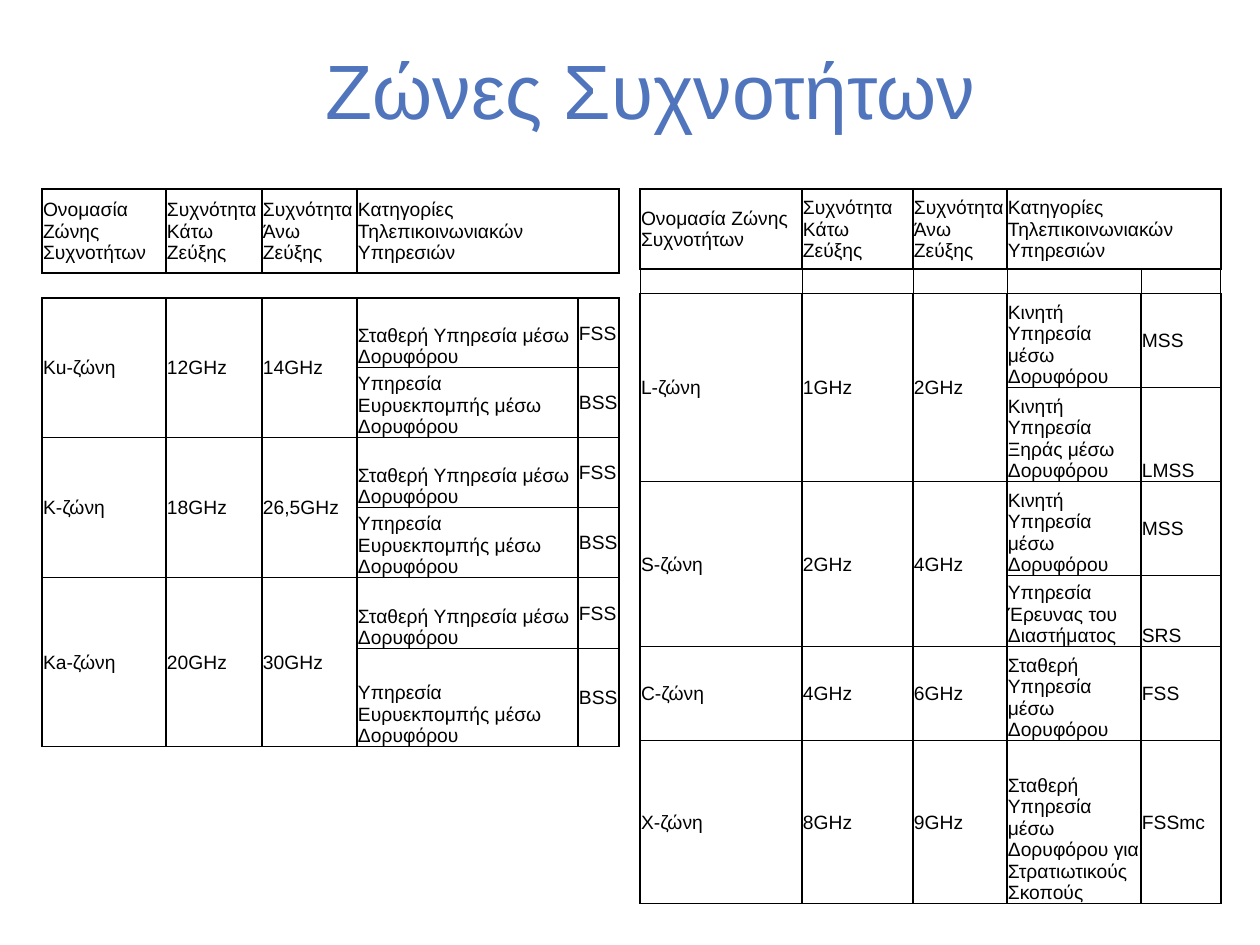
from lxml import etree
from pptx import Presentation
from pptx import util as u
from pptx.dml.color import RGBColor
from pptx.enum import text
from pptx.oxml import ns

SLIDE_W, SLIDE_H = 1260, 945
PX = 914400 / 126
FONT = "Arial"
BLUE = RGBColor(0x50, 0x75, 0xBC)
BLACK = RGBColor(0, 0, 0)
PLAIN_STYLE = "{2D5ABB26-0587-4C30-8999-92F81FD0307C}"
MIDDLE = text.MSO_ANCHOR.MIDDLE
BOTTOM = text.MSO_ANCHOR.BOTTOM

HEADINGS = [
    "Ονομασία Ζώνης Συχνοτήτων",
    "Συχνότητα Κάτω Ζεύξης",
    "Συχνότητα Άνω Ζεύξης",
    "Κατηγορίες Τηλεπικοινωνιακών Υπηρεσιών",
]
FIXED = "Σταθερή Υπηρεσία μέσω Δορυφόρου"
BROADCAST = "Υπηρεσία Ευρυεκπομπής μέσω Δορυφόρου"
MOBILE = "Κινητή Υπηρεσία μέσω Δορυφόρου"
FIXED_AND_BROADCAST = [(FIXED, "FSS", MIDDLE), (BROADCAST, "BSS", MIDDLE)]

HIGH_BANDS = [
    ("Ku-ζώνη", "12GHz", "14GHz", FIXED_AND_BROADCAST),
    ("K-ζώνη", "18GHz", "26,5GHz", FIXED_AND_BROADCAST),
    ("Ka-ζώνη", "20GHz", "30GHz", FIXED_AND_BROADCAST),
]
LOW_BANDS = [
    ("L-ζώνη", "1GHz", "2GHz", [
        (MOBILE, "MSS", MIDDLE),
        ("Κινητή Υπηρεσία Ξηράς μέσω Δορυφόρου", "LMSS", BOTTOM),
    ]),
    ("S-ζώνη", "2GHz", "4GHz", [
        (MOBILE, "MSS", MIDDLE),
        ("Υπηρεσία Έρευνας του Διαστήματος", "SRS", BOTTOM),
    ]),
    ("C-ζώνη", "4GHz", "6GHz", [(FIXED, "FSS", MIDDLE)]),
    ("X-ζώνη", "8GHz", "9GHz", [
        ("Σταθερή Υπηρεσία μέσω Δορυφόρου για Στρατιωτικούς Σκοπούς",
         "FSSmc", MIDDLE),
    ]),
]


def px(value):
    return u.Emu(round(value * PX))


def add_run(paragraph, words, size, colour):
    run = paragraph.add_run()
    run.text = words
    run.font.name = FONT
    run.font.size = u.Pt(size)
    run.font.color.rgb = colour


def write_cell(cell, words, anchor=MIDDLE):
    cell.vertical_anchor = anchor
    add_run(cell.text_frame.paragraphs[0], words, 11, BLACK)


def draw_borders(cell, sides, top, bottom):
    properties = cell._tc.get_or_add_tcPr()
    for side, points in zip("LRTB", (sides, sides, top, bottom)):
        if points:
            line = etree.SubElement(properties, ns.qn(f"a:ln{side}"), w=str(u.Pt(points)))
            fill = etree.SubElement(line, ns.qn("a:solidFill"))
            etree.SubElement(fill, ns.qn("a:srgbClr"), val=str(BLACK))


def format_cells(table, gap_sides):
    last = len(table.rows) - 1
    for index, row in enumerate(table.rows):
        if index == 0:
            borders = (1, 1, 1)
        elif index == 1:
            borders = (gap_sides, 1, 1 if not gap_sides else 0.5)
        else:
            top = 1 if index == 2 and not gap_sides else 0.5
            borders = (1, top, 0.5)
        for cell in row.cells:
            cell.margin_left = cell.margin_right = cell.margin_top = px(1)
            cell.margin_bottom = 0
            draw_borders(cell, *borders)
            cell.fill.background()
            paragraph = cell.text_frame.paragraphs[0]
            if not paragraph.runs:
                etree.SubElement(paragraph._p, ns.qn("a:endParaRPr"), sz="1100")


def add_band_table(slide, left, top, widths, heights, bands, gap_sides):
    frame = slide.shapes.add_table(
        len(heights), len(widths), px(left), px(top), px(sum(widths)), px(sum(heights)))
    table = frame.table
    table.first_row = table.horz_banding = False
    table._tbl.tblPr.find(ns.qn("a:tableStyleId")).text = PLAIN_STYLE
    for column, width in zip(table.columns, widths):
        column.width = px(width)
    for row, height in zip(table.rows, heights):
        row.height = px(height)

    for column, heading in enumerate(HEADINGS):
        write_cell(table.cell(0, column), heading)
    table.cell(0, 3).merge(table.cell(0, 4))

    first = 2
    for *band, services in bands:
        end = first + len(services) - 1
        for column, words in enumerate(band):
            write_cell(table.cell(first, column), words)
            if end > first:
                table.cell(first, column).merge(table.cell(end, column))
        for row, (service, code, code_anchor) in enumerate(services, first):
            write_cell(table.cell(row, 3), service, BOTTOM)
            write_cell(table.cell(row, 4), code, code_anchor)
        first = end + 1
    format_cells(table, gap_sides)


def place_title(slide, left, top, width, height):
    title = slide.shapes.title
    title.left, title.top = px(left), px(top)
    title.width, title.height = px(width), px(height)
    frame = title.text_frame
    frame.word_wrap = True
    frame.auto_size = text.MSO_AUTO_SIZE.NONE
    frame.vertical_anchor = BOTTOM
    frame.margin_bottom = px(2)
    paragraph = frame.paragraphs[0]
    paragraph.alignment = text.PP_ALIGN.CENTER
    paragraph.space_before = u.Pt(0)
    add_run(paragraph, "Ζώνες Συχνοτήτων", 44, BLUE)


def main():
    deck = Presentation()
    deck.slide_width, deck.slide_height = px(SLIDE_W), px(SLIDE_H)
    slide = deck.slides.add_slide(deck.slide_layouts[5])
    place_title(slide, 42, 31, 1218, 106)
    add_band_table(slide, 640, 189, [162, 111, 94, 134, 80],
                   [80, 24, 94, 94, 94, 71, 94, 163], LOW_BANDS, 0.5)
    add_band_table(slide, 42, 189, [124, 96, 95, 221, 41],
                   [84, 24, 70, 70, 70, 70, 71, 98], HIGH_BANDS, 0)
    deck.save("out.pptx")


if __name__ == "__main__":
    main()
